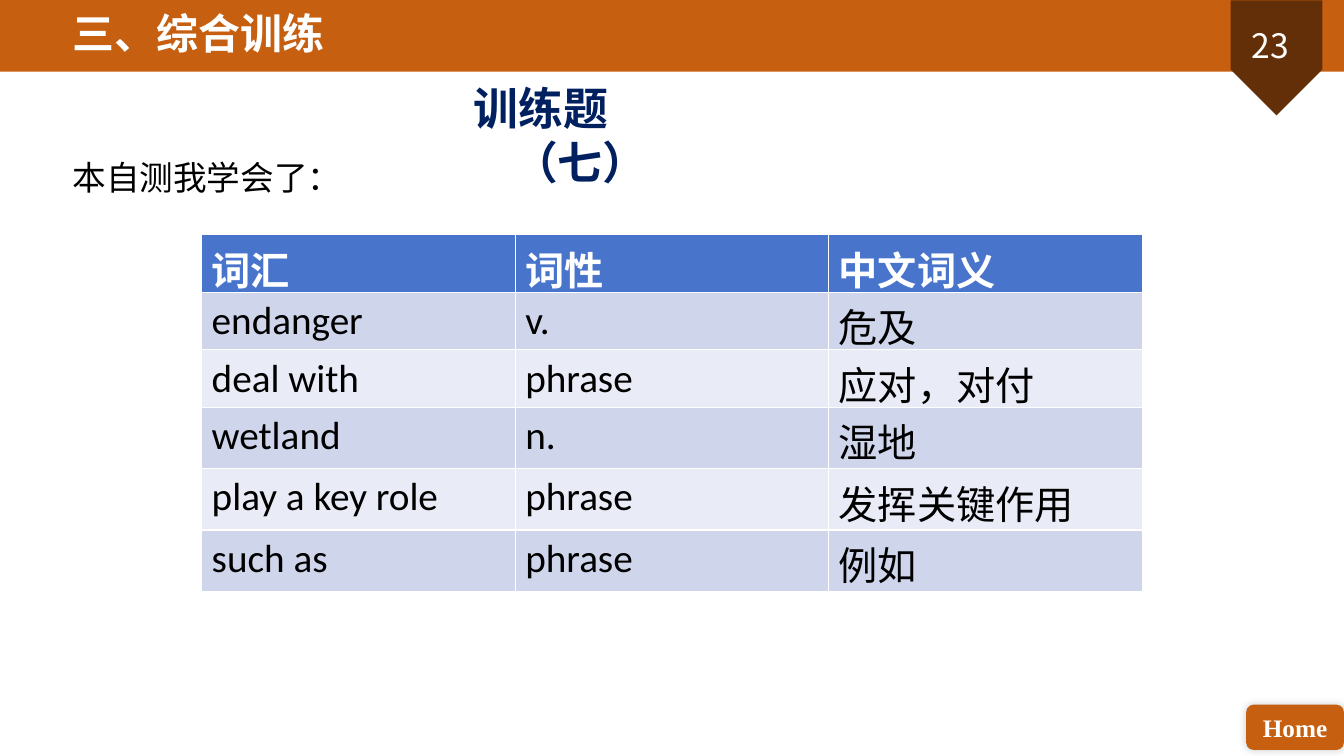
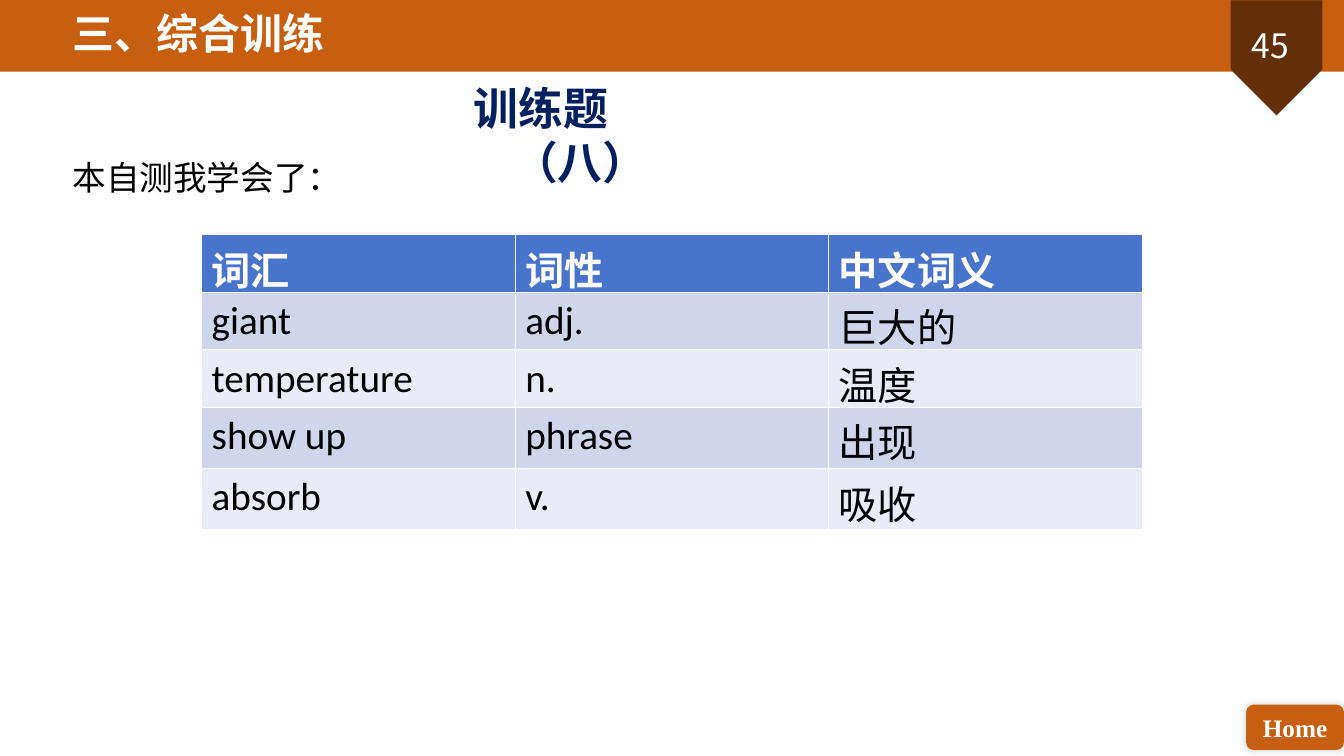
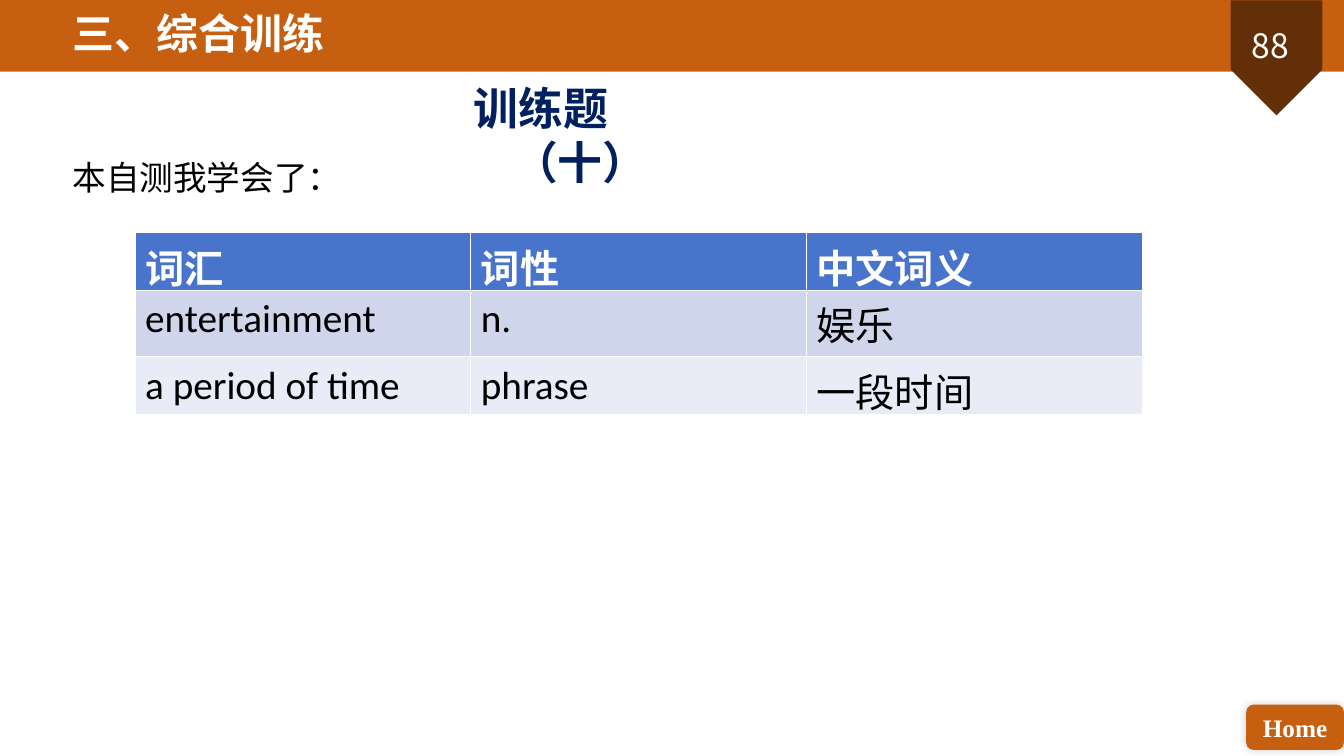
import dataclasses

import lxml.etree
import pptx
import pptx.dml.color
import pptx.enum.shapes
import pptx.enum.text
import pptx.oxml
import pptx.oxml.ns
import pptx.util

RGB = pptx.dml.color.RGBColor
SHAPE = pptx.enum.shapes.MSO_SHAPE
ALIGN = pptx.enum.text.PP_ALIGN
ANCHOR = pptx.enum.text.MSO_ANCHOR
Inches = pptx.util.Inches

# Palette and fonts
ORANGE = RGB(0xC6, 0x5F, 0x10)
BROWN = RGB(0x63, 0x2F, 0x08)
NAVY = RGB(0x00, 0x20, 0x60)
WHITE = RGB(0xFF, 0xFF, 0xFF)
BLACK = RGB(0x00, 0x00, 0x00)
HEADER_BLUE = RGB(0x48, 0x74, 0xCB)
ROW_BANDS = (RGB(0xCF, 0xD6, 0xEC), RGB(0xE9, 0xEB, 0xF6))
CJK, LATIN, SERIF = "Noto Sans CJK SC", "Calibri", "Times New Roman"

SLIDE_WIDTH, SLIDE_HEIGHT = 13.33, 7.5
TABLE_RIGHT = 11.33
SECTION = "三、综合训练"
LEAD = "本自测我学会了："
HEADINGS = ("词汇", "词性", "中文词义")


@dataclasses.dataclass(frozen=True)
class Box:
    left: float
    top: float
    width: float
    height: float

    def lengths(self) -> tuple:
        return tuple(Inches(v) for v in dataclasses.astuple(self))


@dataclasses.dataclass(frozen=True)
class Style:
    size: float
    font: str
    color: RGB
    bold: bool = False


@dataclasses.dataclass(frozen=True)
class Exercise:
    page: str
    title: str
    words: tuple
    row_heights: tuple
    table_left: float = 2
    table_top: float = 2.33


EXERCISES = (
    Exercise("23", "训练题（七）", (
        ("endanger", "v.", "危及"),
        ("deal with", "phrase", "应对，对付"),
        ("wetland", "n.", "湿地"),
        ("play a key role", "phrase", "发挥关键作用"),
        ("such as", "phrase", "例如"),
    ), (0.57, 0.57, 0.57, 0.61, 0.61, 0.61)),
    Exercise("45", "训练题（八）", (
        ("giant", "adj.", "巨大的"),
        ("temperature", "n.", "温度"),
        ("show up", "phrase", "出现"),
        ("absorb", "v.", "吸收"),
    ), (0.57, 0.57, 0.57, 0.61, 0.61)),
    Exercise("88", "训练题（十）", (
        ("entertainment", "n.", "娱乐"),
        ("a period of time", "phrase", "一段时间"),
    ), (0.57, 0.66, 0.57), table_left=1.34, table_top=2.31),
)


def add_run(paragraph, text: str, style: Style) -> None:
    run = paragraph.add_run()
    run.text = text
    run.font.size = pptx.util.Pt(style.size)
    run.font.name = style.font
    run.font.bold = style.bold
    run.font.color.rgb = style.color
    if style.font == CJK:
        east_asian = lxml.etree.SubElement(
            run.font._element, pptx.oxml.ns.qn("a:ea"))
        east_asian.set("typeface", CJK)


def add_text(slide, box: Box, text: str, style: Style, align=ALIGN.LEFT):
    frame = slide.shapes.add_textbox(*box.lengths()).text_frame
    frame.word_wrap = True
    paragraph = frame.paragraphs[0]
    paragraph.alignment = align
    add_run(paragraph, text, style)
    return paragraph


def add_block(slide, kind, box: Box, color: RGB):
    block = slide.shapes.add_shape(kind, *box.lengths())
    block.shadow.inherit = False
    block.fill.solid()
    block.fill.fore_color.rgb = color
    block.line.fill.background()
    return block


def add_soft_shadow(block) -> None:
    effects = block._element.spPr.find(pptx.oxml.ns.qn("a:effectLst"))
    effects.append(pptx.oxml.parse_xml(
        f'<a:outerShdw {pptx.oxml.ns.nsdecls("a")} blurRad="76200" dist="0" '
        'dir="18900000"><a:srgbClr val="000000"><a:alpha val="20000"/>'
        '</a:srgbClr></a:outerShdw>'))


def add_page_frame(slide, page: str) -> None:
    # Top band with the page ribbon
    add_block(slide, SHAPE.RECTANGLE, Box(0, 0, SLIDE_WIDTH, 0.71), ORANGE)
    ribbon = add_block(slide, SHAPE.PENTAGON, Box(12.09, 0.12, 1.14, 0.91), BROWN)
    ribbon.rotation = 90
    number = add_text(slide, Box(12.14, 0.2, 0.98, 0.5), page,
                      Style(24, CJK, WHITE), ALIGN.CENTER)
    add_run(number, " ", Style(18, CJK, WHITE))

    # Home button
    home = add_block(slide, SHAPE.ROUNDED_RECTANGLE,
                     Box(12.36, 6.99, 0.97, 0.45), ORANGE)
    add_soft_shadow(home)
    home.text_frame.vertical_anchor = ANCHOR.MIDDLE
    label = home.text_frame.paragraphs[0]
    label.alignment = ALIGN.CENTER
    add_run(label, "Home", Style(18, SERIF, WHITE, True))

    add_text(slide, Box(0.62, 0.03, 3.14, 0.6), SECTION,
             Style(30, LATIN, WHITE, True), ALIGN.JUSTIFY)


def add_word_table(slide, exercise: Exercise) -> None:
    rows = (HEADINGS, *exercise.words)
    box = Box(exercise.table_left, exercise.table_top,
              TABLE_RIGHT - exercise.table_left, sum(exercise.row_heights))
    table = slide.shapes.add_table(len(rows), len(HEADINGS), *box.lengths()).table
    for row, height in zip(table.rows, exercise.row_heights):
        row.height = Inches(height)
    for r, words in enumerate(rows):
        header = r == 0
        style = Style(28, LATIN, WHITE if header else BLACK, header)
        for c, word in enumerate(words):
            cell = table.cell(r, c)
            cell.fill.solid()
            cell.fill.fore_color.rgb = HEADER_BLUE if header else ROW_BANDS[(r - 1) % 2]
            add_run(cell.text_frame.paragraphs[0], word, style)


def add_exercise(deck, exercise: Exercise) -> None:
    slide = deck.slides.add_slide(deck.slide_layouts[6])
    add_page_frame(slide, exercise.page)

    # Exercise title with a hanging indent
    title = add_text(slide, Box(4.6, 0.75, 2.61, 0.64), exercise.title,
                     Style(32, CJK, NAVY, True))
    indents = title._p.get_or_add_pPr()
    indents.set("marL", str(Inches(0.39)))
    indents.set("indent", str(Inches(-0.5)))

    lead = add_text(slide, Box(0.62, 1.39, 10.88, 1.15), LEAD, Style(24, CJK, BLACK))
    lead.line_spacing = 1.3
    add_word_table(slide, exercise)


def main() -> None:
    deck = pptx.Presentation()
    deck.slide_width = Inches(SLIDE_WIDTH)
    deck.slide_height = Inches(SLIDE_HEIGHT)
    for exercise in EXERCISES:
        add_exercise(deck, exercise)
    deck.save("out.pptx")


if __name__ == "__main__":
    main()
